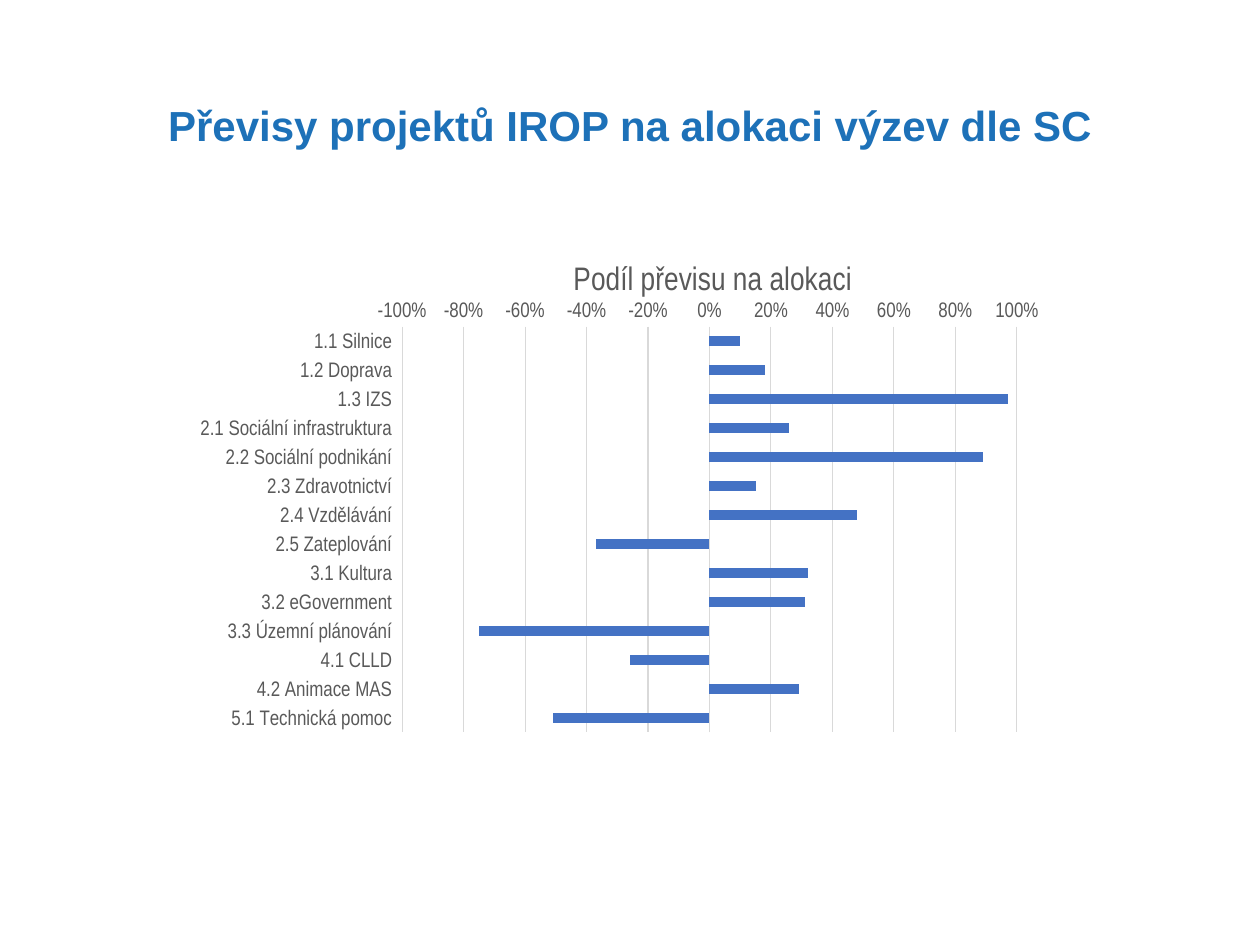
from dataclasses import dataclass

from lxml import etree
from pptx import Presentation
from pptx.chart.data import CategoryChartData
from pptx.dml.color import RGBColor
from pptx.enum.chart import XL_CHART_TYPE, XL_TICK_LABEL_POSITION, XL_TICK_MARK
from pptx.enum.text import MSO_ANCHOR, PP_ALIGN
from pptx.oxml import parse_xml
from pptx.oxml.ns import nsdecls, qn
from pptx.util import Inches, Pt

BAR = XL_CHART_TYPE.BAR_CLUSTERED
LABELS_LOW = XL_TICK_LABEL_POSITION.LOW
NO_TICK = XL_TICK_MARK.NONE
MIDDLE = MSO_ANCHOR.MIDDLE
CENTER = PP_ALIGN.CENTER
TITLE_ONLY = 5


@dataclass(frozen=True)
class Theme:
    font: str = "Arial"
    heading: RGBColor = RGBColor(0x1D, 0x71, 0xB8)
    label: RGBColor = RGBColor(0x59, 0x59, 0x59)
    grid: RGBColor = RGBColor(0xD9, 0xD9, 0xD9)
    bar: RGBColor = RGBColor(0x44, 0x72, 0xC4)
    heading_size: float = 24
    chart_title_size: float = 18.6
    label_size: float = 12
    grid_width: float = 0.75


THEME = Theme()

# Share of excess demand in the allocation, by specific objective
EXCESS = {
    "1.1 Silnice": 0.10,
    "1.2 Doprava": 0.18,
    "1.3 IZS": 0.97,
    "2.1 Sociální infrastruktura": 0.26,
    "2.2 Sociální podnikání": 0.89,
    "2.3 Zdravotnictví": 0.15,
    "2.4 Vzdělávání": 0.48,
    "2.5 Zateplování": -0.37,
    "3.1 Kultura": 0.32,
    "3.2 eGovernment": 0.31,
    "3.3 Územní plánování": -0.75,
    "4.1 CLLD": -0.26,
    "4.2 Animace MAS": 0.29,
    "5.1 Technická pomoc": -0.51,
}


def style_font(font, size, color, bold=False):
    font.name = THEME.font
    font.size = Pt(size)
    font.bold = bold
    font.color.rgb = color


def style_line(line):
    line.color.rgb = THEME.grid
    line.width = Pt(THEME.grid_width)


def set_plot_layout(chart, x, y, w, h):
    """Fix the inner plot area, as fractions of the chart."""
    area = chart.element.find(f".//{qn('c:plotArea')}")
    for old in area.findall(qn("c:layout")):
        area.remove(old)
    layout = parse_xml(f"<c:layout {nsdecls('c')}><c:manualLayout/></c:layout>")
    settings = {"layoutTarget": "inner", "xMode": "edge", "yMode": "edge",
                "x": x, "y": y, "w": w, "h": h}
    for name, value in settings.items():
        etree.SubElement(layout[0], qn(f"c:{name}")).set("val", str(value))
    area.insert(0, layout)


def add_heading(page, text, left, top, width, height):
    title = page.shapes.title
    title.left, title.top, title.width, title.height = left, top, width, height
    frame = title.text_frame
    frame.text = text
    frame.word_wrap = True
    frame.vertical_anchor = MIDDLE
    para = frame.paragraphs[0]
    para.alignment = CENTER
    para.line_spacing = 0.9
    style_font(para.runs[0].font, THEME.heading_size, THEME.heading, bold=True)


def add_excess_chart(page, title, left, top, width, height):
    data = CategoryChartData(number_format="0%")
    data.categories = list(EXCESS)
    data.add_series("Series 1", list(EXCESS.values()))
    chart = page.shapes.add_chart(BAR, left, top, width, height, data).chart
    chart.has_legend = False
    style_font(chart.font, THEME.label_size, THEME.label)
    set_plot_layout(chart, 0.05, 0.18, 0.89, 0.78)

    # Chart title
    chart.has_title = True
    frame = chart.chart_title.text_frame
    frame.text = title
    style_font(frame.paragraphs[0].runs[0].font, THEME.chart_title_size, THEME.label)
    chart.chart_title.include_in_layout = False

    # Bars
    plot = chart.plots[0]
    plot.gap_width = 182
    plot.vary_by_categories = False
    bars = plot.series[0]
    bars.invert_if_negative = False
    bars.format.fill.solid()
    bars.format.fill.fore_color.rgb = THEME.bar

    # Axes
    for axis in (chart.category_axis, chart.value_axis):
        axis.major_tick_mark = axis.minor_tick_mark = NO_TICK
        style_font(axis.tick_labels.font, THEME.label_size, THEME.label)
    categories, values = chart.category_axis, chart.value_axis
    categories.reverse_order = True
    categories.tick_label_position = LABELS_LOW
    categories.has_major_gridlines = False
    style_line(categories.format.line)
    values.minimum_scale, values.maximum_scale, values.major_unit = -1, 1, 0.2
    values.tick_labels.number_format = "0%"
    values.tick_labels.number_format_is_linked = False
    values.format.line.fill.background()
    values.has_major_gridlines = True
    style_line(values.major_gridlines.format.line)


def main():
    deck = Presentation()
    deck.slide_width, deck.slide_height = Inches(10), Inches(7.5)
    page = deck.slides.add_slide(deck.slide_layouts[TITLE_ONLY])
    add_heading(page, "Převisy projektů IROP na alokaci výzev dle SC",
                Inches(0.69), Inches(0.29), Inches(8.62), Inches(1.45))
    add_excess_chart(page, "Podíl převisu na alokaci",
                     Inches(1.59), Inches(1.85), Inches(6.81), Inches(4.13))
    deck.save("out.pptx")


if __name__ == "__main__":
    main()
